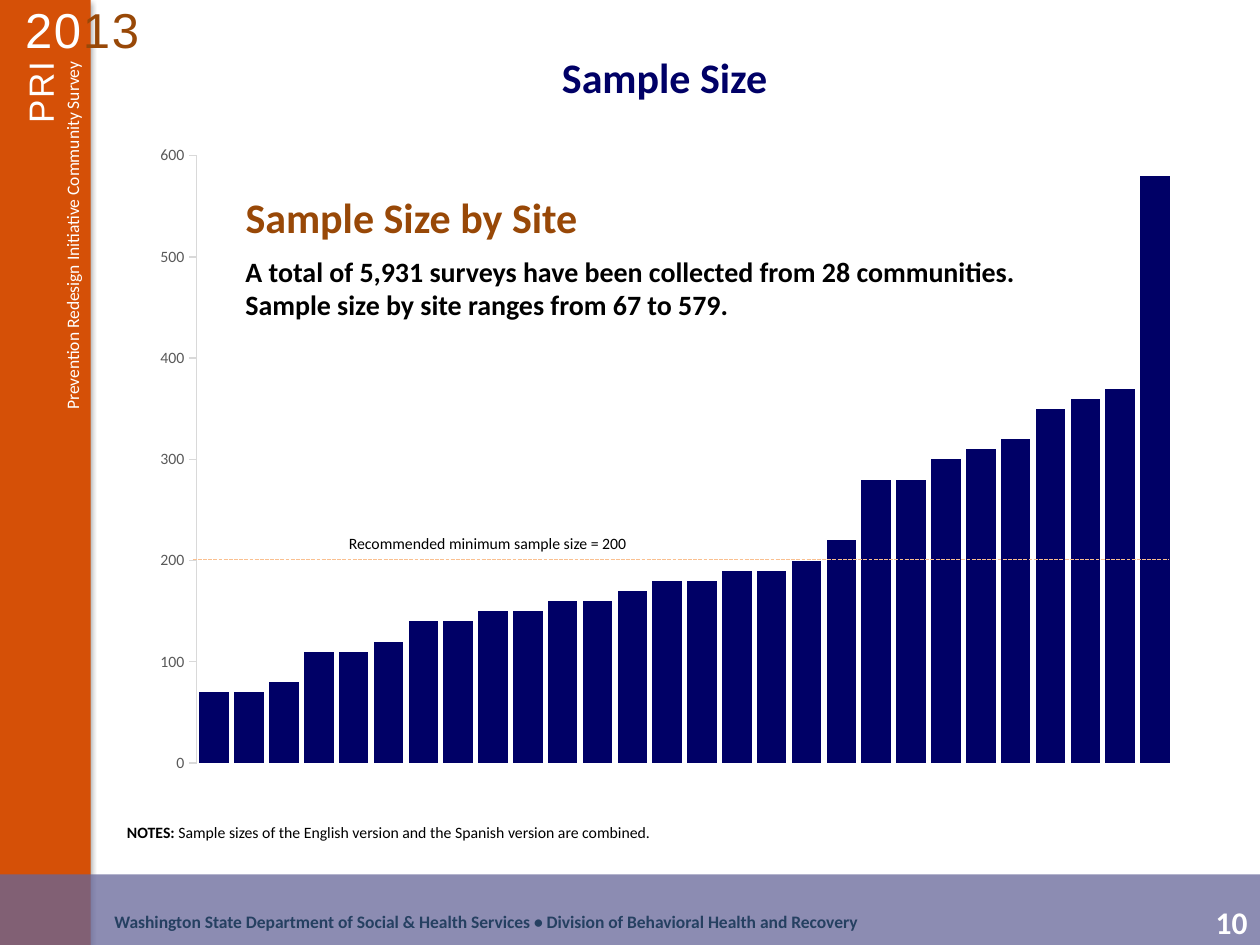
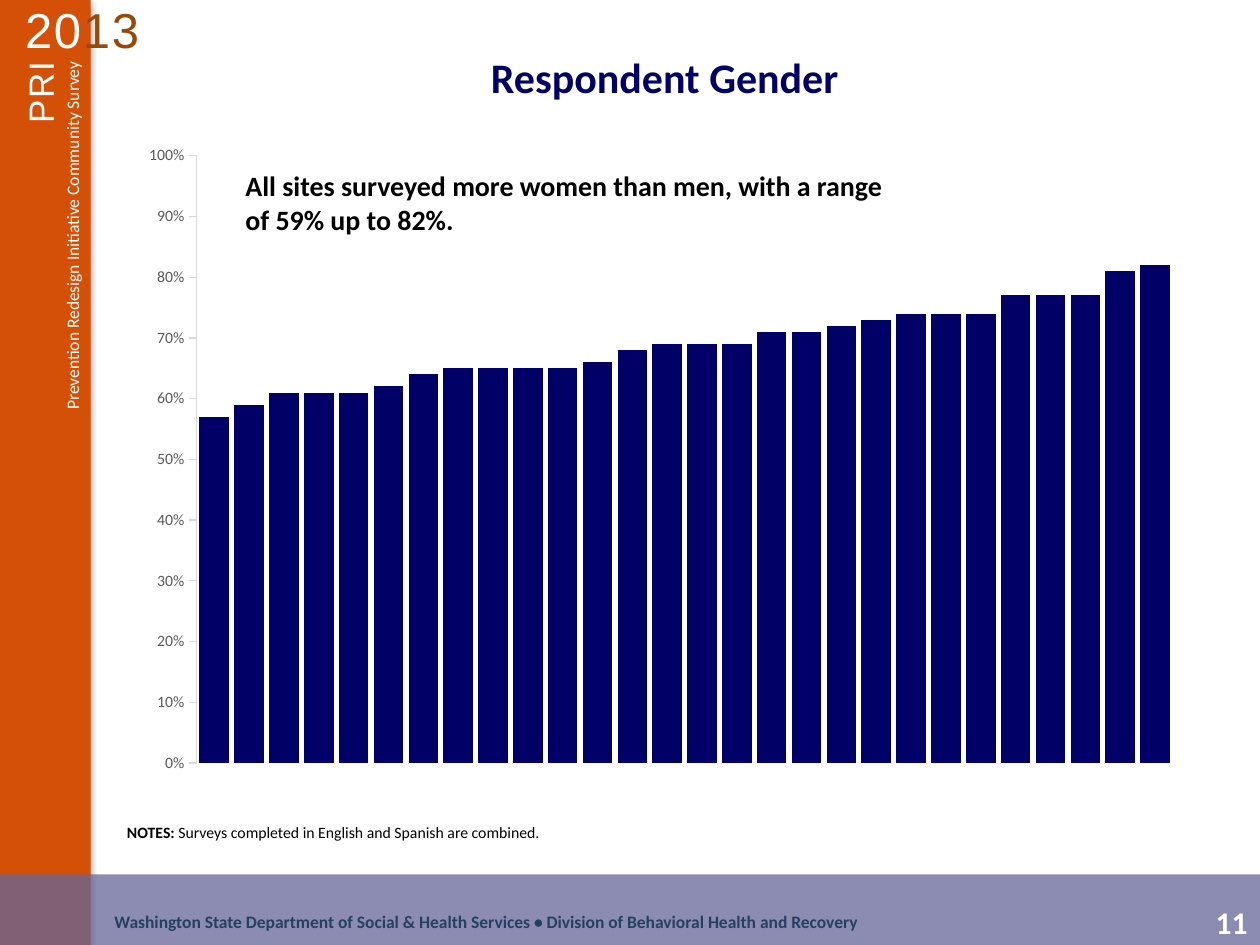
from lxml import etree
from pptx import Presentation
from pptx.chart.data import CategoryChartData
from pptx.dml.color import RGBColor
from pptx.enum.chart import XL_CHART_TYPE, XL_TICK_MARK
from pptx.enum.dml import MSO_LINE
from pptx.enum.shapes import MSO_CONNECTOR, MSO_SHAPE
from pptx.enum.text import MSO_ANCHOR, PP_ALIGN
from pptx.oxml.ns import qn
from pptx.util import Inches, Pt

WHITE = RGBColor(0xFF, 0xFF, 0xFF)
BLACK = RGBColor(0x00, 0x00, 0x00)
NAVY = RGBColor(0x00, 0x00, 0x66)
ORANGE = RGBColor(0xD5, 0x50, 0x07)
BROWN = RGBColor(0x98, 0x48, 0x07)
PEACH = RGBColor(0xFA, 0xC0, 0x90)
SLATE = RGBColor(0x66, 0x66, 0x99)
STEEL = RGBColor(0x25, 0x40, 0x61)
AXIS_TEXT = RGBColor(0x59, 0x59, 0x59)
AXIS_LINE = RGBColor(0xD9, 0xD9, 0xD9)

WIDTH, HEIGHT = 10, 7.5
SIDEBAR_WIDTH = 0.72
FOOTER_TOP = 6.94
CHART_BOX = (1.06, 1.06, 8.51, 5.35)
PLOT_LAYOUT = {"x": 0.059, "y": 0.033, "w": 0.91, "h": 0.901}
TEXT_LEFT = 1.85

SURVEY = "Prevention Redesign Initiative Community Survey"
AGENCY = ("Washington State Department of Social & Health Services • "
          "Division of Behavioral Health and Recovery")

SLIDES = [
    {
        "number": 10,
        "title": "Sample Size",
        "values": [70, 70, 80, 110, 110, 120, 140, 140, 150, 150, 160, 160, 170, 180,
                   180, 190, 190, 200, 220, 280, 280, 300, 310, 320, 350, 360, 370, 580],
        "axis": {"top": 600, "step": 100, "number_format": "#,##0"},
        "heading": ("Sample Size by Site", (TEXT_LEFT, 1.47, 3.11, 0.5)),
        "finding": ("A total of 5,931 surveys have been collected from 28 communities. "
                    "Sample size by site ranges from 67 to 579.",
                    (TEXT_LEFT, 1.97, 6.37, 0.64)),
        "threshold": "Recommended minimum sample size = 200",
        "note": "Sample sizes of the English version and the Spanish version are combined.",
    },
    {
        "number": 11,
        "title": "Respondent Gender",
        "values": [0.57, 0.59, 0.61, 0.61, 0.61, 0.62, 0.64, 0.65, 0.65, 0.65,
                   0.65, 0.66, 0.68, 0.69, 0.69, 0.69, 0.71, 0.71, 0.72, 0.73,
                   0.74, 0.74, 0.74, 0.77, 0.77, 0.77, 0.81, 0.82],
        "axis": {"top": 1, "step": 0.1, "number_format": "0%"},
        "finding": ("All sites surveyed more women than men, with a range "
                    "of 59% up to 82%.", (TEXT_LEFT, 1.29, 5.47, 0.64)),
        "note": "Surveys completed in English and Spanish are combined.",
    },
]


def inches(box):
    return [Inches(length) for length in box]


def add_text(page, box, text, size=9, color=BLACK, bold=False, font="Calibri",
             align=PP_ALIGN.LEFT, anchor=MSO_ANCHOR.TOP, rotation=0, spacing=0):
    """Add a text box; text is a string or a list of (string, changes) spans."""
    shape = page.shapes.add_textbox(*inches(box))
    shape.rotation = rotation
    frame = shape.text_frame
    frame.word_wrap = True
    frame.vertical_anchor = anchor
    para = frame.paragraphs[0]
    para.alignment = align
    for words, changes in [(text, {})] if isinstance(text, str) else text:
        span = para.add_run()
        span.text = words
        span.font.name = font
        span.font.size = Pt(size)
        span.font.bold = changes.get("bold", bold)
        span.font.color.rgb = changes.get("color", color)
        if spacing:
            span._r.get_or_add_rPr().set("spc", str(spacing * 100))


def add_band(page, box, color):
    band = page.shapes.add_shape(MSO_SHAPE.RECTANGLE, *inches(box))
    band.shadow.inherit = False
    band.fill.solid()
    band.fill.fore_color.rgb = color
    band.line.fill.background()
    return band


def set_alpha(color_element, percent):
    etree.SubElement(color_element, qn("a:alpha"), val=str(percent * 1000))


def add_frame(page, number):
    """Draw the sidebar, footer and page number that every slide carries."""
    sidebar = add_band(page, (0, 0, SIDEBAR_WIDTH, HEIGHT), ORANGE)
    effects = sidebar.element.spPr.find(qn("a:effectLst"))
    shadow = etree.SubElement(effects, qn("a:outerShdw"), blurRad=str(Pt(3.1)),
                              dist=str(Pt(1.8)), dir="5400000", rotWithShape="0")
    set_alpha(etree.SubElement(shadow, qn("a:srgbClr"), val=str(BLACK)), 35)

    footer = add_band(page, (0, FOOTER_TOP, WIDTH, HEIGHT - FOOTER_TOP), SLATE)
    set_alpha(footer.element.spPr.find(qn("a:solidFill"))[0], 75)

    add_text(page, (9.44, 7.12, 0.67, 0.4), str(number), size=18, color=WHITE,
             bold=True, align=PP_ALIGN.CENTER)
    add_text(page, (0.81, 7, 9.14, 0.45), AGENCY, size=10, color=STEEL, bold=True,
             anchor=MSO_ANCHOR.BOTTOM)
    add_text(page, (0.1, -0.05, 1.38, 0.57), [("20", {}), ("13", {"color": BROWN})],
             size=28, color=WHITE, font="Arial", spacing=1)
    add_text(page, (-0.95, 1.78, 3.05, 0.27), SURVEY, size=10, color=WHITE,
             align=PP_ALIGN.RIGHT, rotation=270)
    add_text(page, (-2.35, 2.84, 5.34, 0.44), "PRI", size=20, color=WHITE,
             font="Arial", align=PP_ALIGN.RIGHT, rotation=270, spacing=1)


def fix_plot_area(chart):
    """Pin the inner plot area to PLOT_LAYOUT."""
    plot_area = chart.element.find(".//" + qn("c:plotArea"))
    for old in plot_area.findall(qn("c:layout")):
        plot_area.remove(old)
    layout = etree.Element(qn("c:layout"))
    plot_area.insert(0, layout)
    manual = etree.SubElement(layout, qn("c:manualLayout"))
    settings = {"layoutTarget": "inner", "xMode": "edge", "yMode": "edge", **PLOT_LAYOUT}
    for name, value in settings.items():
        etree.SubElement(manual, qn("c:" + name), val=str(value))


def add_site_chart(page, values, top, step, number_format):
    data = CategoryChartData(number_format=number_format)
    data.categories = [str(site) for site in range(1, len(values) + 1)]
    data.add_series("Series 1", values)
    chart = page.shapes.add_chart(XL_CHART_TYPE.COLUMN_CLUSTERED,
                                  *inches(CHART_BOX), data).chart
    chart.has_title = False
    chart.has_legend = False
    chart.font.name = "Calibri"
    chart.font.size = Pt(18)
    chart.font.color.rgb = BLACK

    plot = chart.plots[0]
    plot.gap_width = 18
    plot.vary_by_categories = False
    bars = plot.series[0].format.fill
    bars.solid()
    bars.fore_color.rgb = NAVY

    chart.category_axis.visible = False
    axis = chart.value_axis
    axis.has_major_gridlines = False
    axis.minimum_scale, axis.maximum_scale, axis.major_unit = 0, top, step
    axis.major_tick_mark = XL_TICK_MARK.OUTSIDE
    axis.format.line.color.rgb = AXIS_LINE
    axis.format.line.width = Pt(0.75)
    labels = axis.tick_labels
    labels.number_format = number_format
    labels.number_format_is_linked = False
    labels.font.name = "Calibri"
    labels.font.size = Pt(9)
    labels.font.color.rgb = AXIS_TEXT
    fix_plot_area(chart)


def add_threshold(page, label):
    rule = page.shapes.add_connector(MSO_CONNECTOR.STRAIGHT,
                                     *inches((1.53, 4.44, 9.27, 4.44)))
    rule.line.color.rgb = PEACH
    rule.line.width = Pt(0.75)
    rule.line.dash_style = MSO_LINE.SQUARE_DOT
    etree.SubElement(rule.element.spPr, qn("a:effectLst"))
    add_text(page, (2.67, 4.19, 3.15, 0.25), label)


def build_slide(deck, content):
    page = deck.slides.add_slide(deck.slide_layouts[6])
    add_frame(page, content["number"])
    add_text(page, (0.93, 0.36, 8.69, 0.5), content["title"], size=24, color=NAVY,
             bold=True, align=PP_ALIGN.CENTER)
    add_site_chart(page, content["values"], **content["axis"])
    add_text(page, (0.91, 6.48, 8.66, 0.25),
             [("NOTES: ", {"bold": True}), (content["note"], {})])
    finding, box = content["finding"]
    add_text(page, box, finding, size=16, bold=True)
    if "heading" in content:
        heading, box = content["heading"]
        add_text(page, box, heading, size=24, color=BROWN, bold=True)
    if "threshold" in content:
        add_threshold(page, content["threshold"])


def main():
    deck = Presentation()
    deck.slide_width, deck.slide_height = inches((WIDTH, HEIGHT))
    for content in SLIDES:
        build_slide(deck, content)
    deck.save("out.pptx")


if __name__ == "__main__":
    main()
